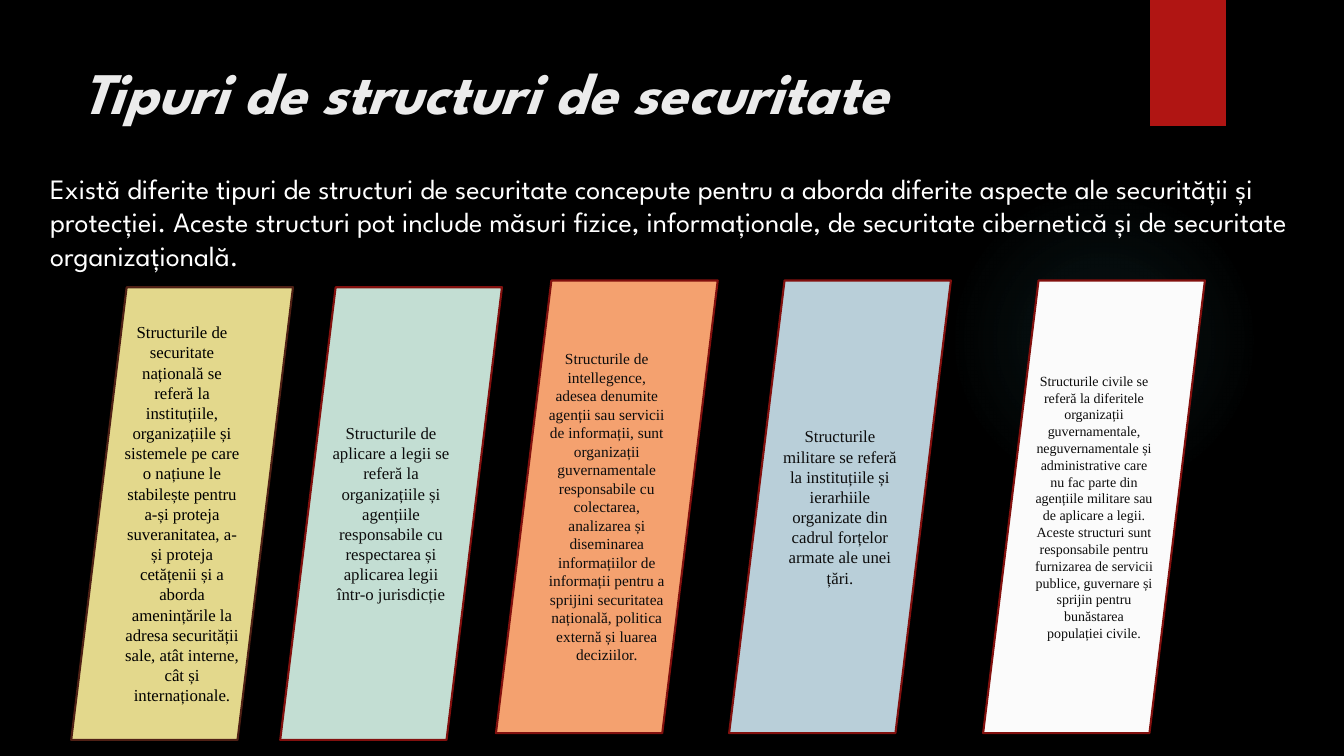
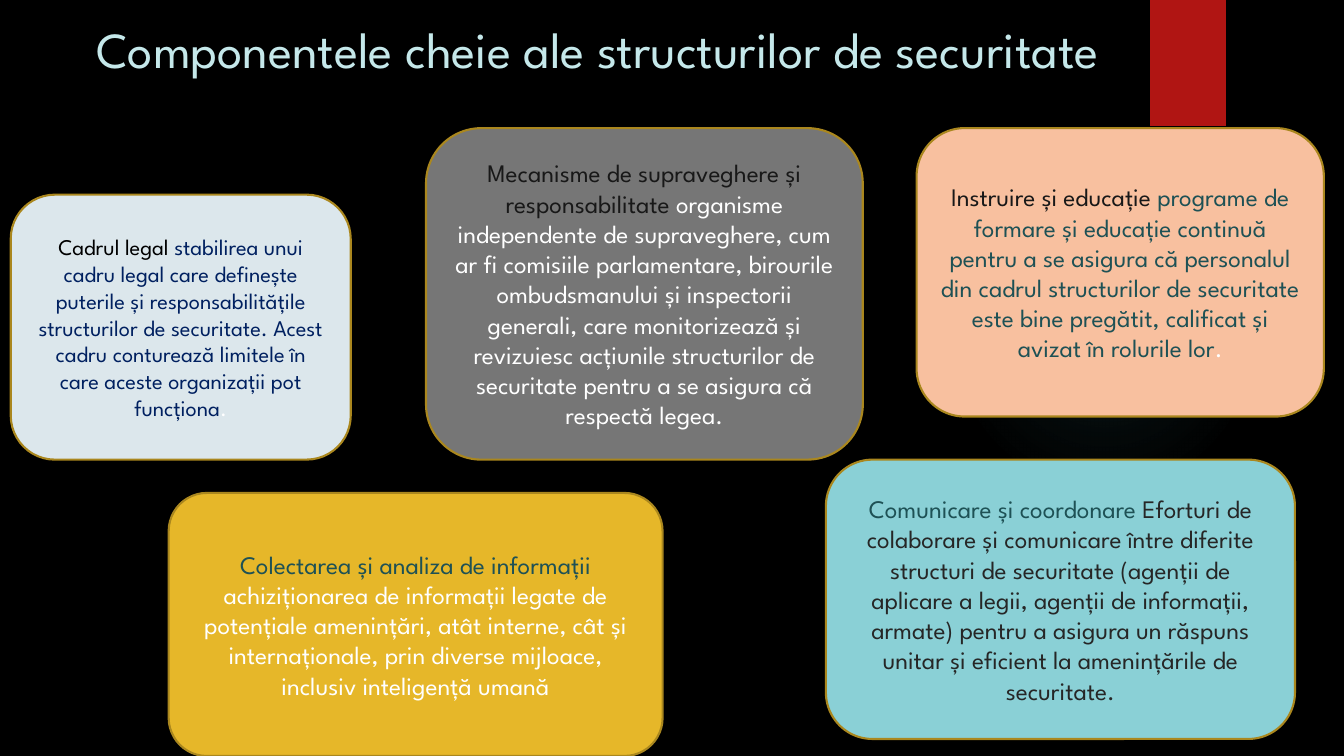
from lxml import etree
from pptx import Presentation
from pptx.dml.color import RGBColor
from pptx.enum.shapes import MSO_SHAPE
from pptx.enum.text import MSO_ANCHOR, MSO_AUTO_SIZE, PP_ALIGN
from pptx.oxml import parse_xml
from pptx.util import Inches, Pt

OVAL, RECT = MSO_SHAPE.OVAL, MSO_SHAPE.RECTANGLE
SLANT, ROUND = MSO_SHAPE.PARALLELOGRAM, MSO_SHAPE.ROUNDED_RECTANGLE
TOP, MIDDLE = MSO_ANCHOR.TOP, MSO_ANCHOR.MIDDLE
LEFT, CENTER = PP_ALIGN.LEFT, PP_ALIGN.CENTER
NO_FIT = MSO_AUTO_SIZE.NONE
NS = "http://schemas.openxmlformats.org/drawingml/2006/main"

SANS, SERIF = "League Spartan", "Times New Roman"
BLACK, WHITE, RED, GLOW = "000000", "FFFFFF", "B01513", "50B9C1"
INK, TEAL, MAROON, GOLD = "0D0D0D", "1E5155", "82100E", "AA871E"
GLOW_STOPS = [(0, 7), (36, 6), (69, 0)]  # position, opacity in percent


def rgb(value):
    return RGBColor.from_string(value)


class Deck:
    """Style and current slide; boxes are percentages of the slide's size."""

    def __init__(self):
        self.prs = Presentation()
        self.prs.slide_width, self.prs.slide_height = Inches(13.33), Inches(7.5)
        self.layout = self.prs.slide_layouts[5]
        fill = self.layout.background.fill
        fill.solid()
        fill.fore_color.rgb = rgb(BLACK)
        self.s = None
        self.decorated = False

    def box(self, x, y, w, h):
        width, height = self.prs.slide_width, self.prs.slide_height
        return [int(share * size / 100) for share, size in
                ((x, width), (y, height), (w, width), (h, height))]

    def slide(self, title, box, size, color, strong=False):
        self.s = self.prs.slides.add_slide(self.layout)
        if not self.decorated:
            self.decorate()
        sp = self.s.shapes.title
        sp.left, sp.top, sp.width, sp.height = self.box(*box)
        font = self.put_text(sp, [(title, color)], SANS, size, LEFT, TOP)
        font.bold = font.italic = strong

    def decorate(self):
        """Place the glow and the red band on the shared layout."""
        glow = self.shape(OVAL, (70.58, 24.4, 23.1, 41.07), GLOW)
        stops = "".join(
            f'<a:gs pos="{pos * 1000}"><a:srgbClr val="{GLOW}">'
            f'<a:alpha val="{alpha * 1000}"/></a:srgbClr></a:gs>'
            for pos, alpha in GLOW_STOPS)
        gradient = parse_xml(
            f'<a:gradFill xmlns:a="{NS}"><a:gsLst>{stops}</a:gsLst>'
            '<a:path path="circle"><a:fillToRect l="50000" t="50000" '
            'r="50000" b="50000"/></a:path></a:gradFill>')
        props = glow.element.spPr
        props.replace(props.find(etree.QName(NS, "solidFill")), gradient)
        band = self.shape(RECT, (85.58, 0, 5.63, 16.67), RED)
        tree = self.layout.shapes.element
        for i, sp in enumerate((glow, band)):
            tree.insert(2 + i, sp.element)
        self.decorated = True

    def shape(self, kind, box, fill, line=None):
        sp = self.s.shapes.add_shape(kind, *self.box(*box))
        sp.shadow.inherit = False
        sp.fill.solid()
        sp.fill.fore_color.rgb = rgb(fill)
        if line:
            sp.line.color.rgb = rgb(line)
            sp.line.width = Pt(1.5)
        else:
            sp.line.fill.background()
        return sp

    def put_text(self, sp, parts, name, size, align, anchor):
        """Set (text, colour) runs as one paragraph; return its font."""
        tf = sp.text_frame
        tf.word_wrap = True
        tf.auto_size = NO_FIT
        tf.vertical_anchor = anchor
        p = tf.paragraphs[0]
        p.alignment = align
        p.font.name, p.font.size = name, Pt(size)
        for text, color in parts:
            r = p.add_run()
            r.text = text
            r.font.color.rgb = rgb(color)
        return p.font

    def text(self, box, text, size, color):
        sp = self.s.shapes.add_textbox(*self.box(*box))
        self.put_text(sp, [(text, color)], SANS, size, LEFT, TOP)

    def panel(self, x, y, fill, line, size, color, text):
        sp = self.shape(SLANT, (x, y, 16.5, 59.87), fill, line)
        self.put_text(sp, [(text, color)], SERIF, size, CENTER, MIDDLE)

    def card(self, box, fill, size, parts, corner=0.1667):
        sp = self.shape(ROUND, box, fill, GOLD)
        sp.adjustments[0] = corner
        self.put_text(sp, parts, SANS, size, CENTER, MIDDLE)


def main():
    deck = Deck()

    # Types of security structures
    deck.slide("Tipuri de structuri de securitate", (5.3, 6.67, 77.2, 20.4),
               42, "EBEBEB", strong=True)
    deck.text((3, 22, 95.8, 16),
              "Există diferite tipuri de structuri de securitate concepute pentru a aborda "
              "diferite aspecte ale securității și protecției. Aceste structuri pot include "
              "măsuri fizice, informaționale, de securitate cibernetică și de securitate "
              "organizațională.", 20, WHITE)
    low, high = 38, 37.1
    panels = [
        (5.3, low, "E3D88C", "4F2015", 12, BLACK,
         "Structurile de securitate națională se referă la instituțiile, organizațiile și "
         "sistemele pe care o națiune le stabilește pentru a-și proteja suveranitatea, a-și "
         "proteja cetățenii și a aborda amenințările la adresa securității sale, atât "
         "interne, cât și internaționale."),
        (20.85, low, "C3DED3", MAROON, 12, INK,
         "Structurile de aplicare a legii se referă la organizațiile și agențiile "
         "responsabile cu respectarea și aplicarea legii într-o jurisdicție"),
        (36.9, high, "F4A16F", MAROON, 11, INK,
         "Structurile de intellegence, adesea denumite agenții sau servicii de informații, "
         "sunt organizații guvernamentale responsabile cu colectarea, analizarea și "
         "diseminarea informațiilor de informații pentru a sprijini securitatea națională, "
         "politica externă și luarea deciziilor."),
        (54.25, high, "B9CFD9", MAROON, 12, INK,
         "Structurile militare se referă la instituțiile și ierarhiile organizate din cadrul "
         "forțelor armate ale unei țări."),
        (73.15, high, "FBFBFB", MAROON, 10, INK,
         "Structurile civile se referă la diferitele organizații guvernamentale, "
         "neguvernamentale și administrative care nu fac parte din agențiile militare sau de "
         "aplicare a legii. Aceste structuri sunt responsabile pentru furnizarea de servicii "
         "publice, guvernare și sprijin pentru bunăstarea populației civile."),
    ]
    for panel in panels:
        deck.panel(*panel)

    # Key components
    deck.slide("Componentele cheie ale structurilor de securitate",
               (6.4, 1.73, 77.2, 7.2), 36, "C5E8EA")
    deck.card((12.55, 65.2, 36.75, 34.8), "E6B729", 18, [
        ("Colectarea și analiza de informații ", TEAL),
        ("achiziționarea de informații legate de potențiale amenințări, atât interne, cât și "
         "internaționale, prin diverse mijloace, inclusiv inteligență umană", WHITE),
    ], corner=0.145)
    deck.card((0.8, 25.75, 25.3, 35.05), "DCE7EC", 16, [
        ("Cadrul legal ", BLACK),
        ("stabilirea unui cadru legal care definește puterile și responsabilitățile "
         "structurilor de securitate. Acest cadru conturează limitele în care aceste "
         "organizații pot funcționa", "002060"),
        (".", WHITE),
    ])
    deck.card((68.2, 16.95, 30.3, 38.15), "F8C09F", 18, [
        ("Instruire și educație ", "181818"),
        ("programe de formare și educație continuă pentru a se asigura că personalul din "
         "cadrul structurilor de securitate este bine pregătit, calificat și avizat în "
         "rolurile lor", TEAL),
        (".", WHITE),
    ])
    deck.card((31.7, 16.95, 32.5, 43.85), "767676", 18, [
        ("Mecanisme de supraveghere și responsabilitate ", "181818"),
        ("organisme independente de supraveghere, cum ar fi comisiile parlamentare, "
         "birourile ombudsmanului și inspectorii generali, care monitorizează și revizuiesc "
         "acțiunile structurilor de securitate pentru a se asigura că respectă legea.", WHITE),
    ])
    deck.card((61.45, 60.8, 34.9, 36.95), "8AD0D6", 18, [
        ("Comunicare și coordonare ", TEAL),
        ("Eforturi de colaborare și comunicare între diferite structuri de securitate "
         "(agenții de aplicare a legii, agenții de informații, armate) pentru a asigura un "
         "răspuns unitar și eficient la amenințările de securitate.", "262626"),
    ])

    deck.prs.save("out.pptx")


if __name__ == "__main__":
    main()
